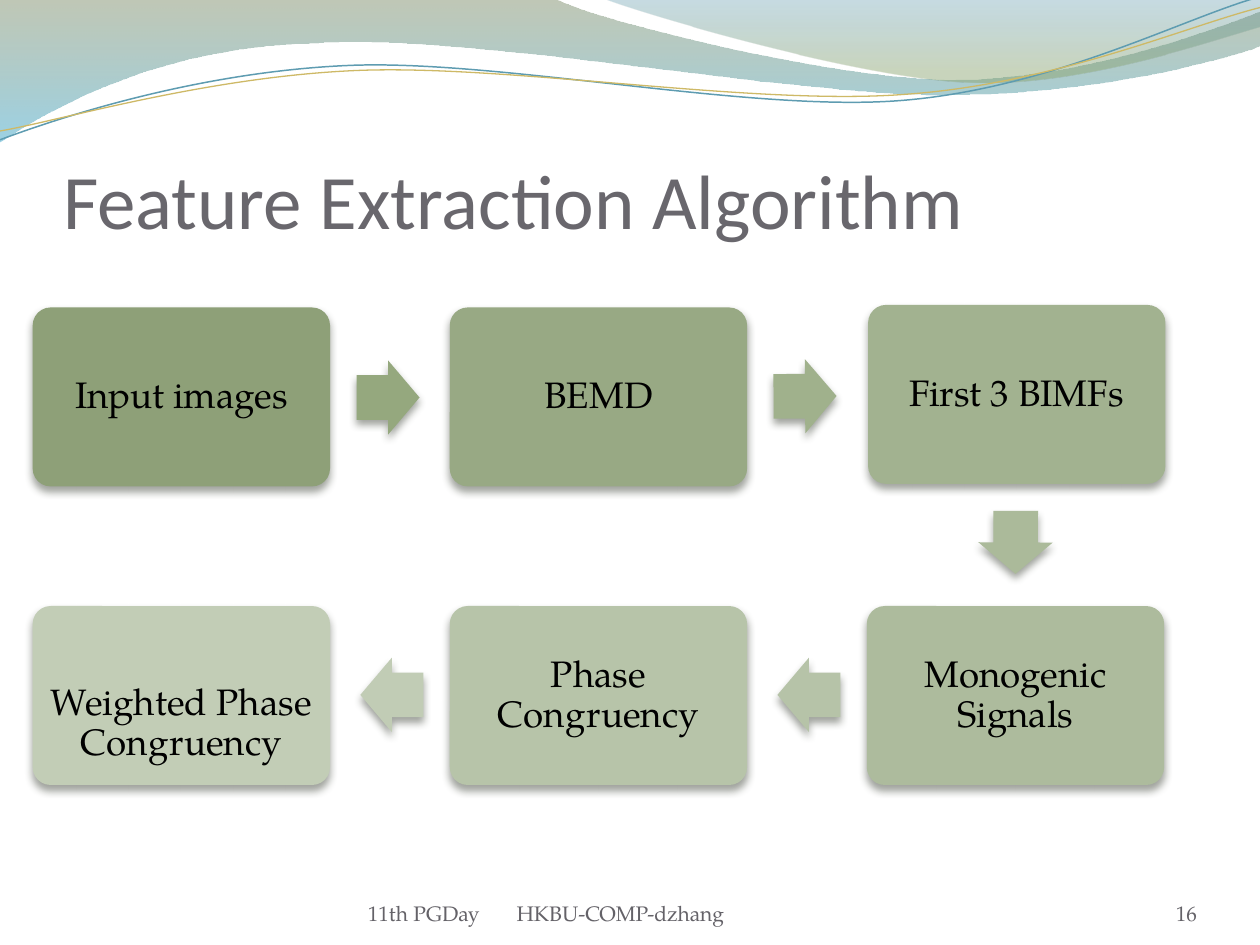
from lxml import etree
from pptx import Presentation
from pptx.dml.color import RGBColor
from pptx.enum.shapes import MSO_SHAPE
from pptx.enum.text import MSO_ANCHOR, MSO_AUTO_SIZE, PP_ALIGN
from pptx.oxml.ns import qn
from pptx.util import Inches, Pt

ROUNDED, ARROW = MSO_SHAPE.ROUNDED_RECTANGLE, MSO_SHAPE.RIGHT_ARROW
LEFT, CENTER, RIGHT = PP_ALIGN.LEFT, PP_ALIGN.CENTER, PP_ALIGN.RIGHT
MIDDLE, BOTTOM = MSO_ANCHOR.MIDDLE, MSO_ANCHOR.BOTTOM
NO_FIT = MSO_AUTO_SIZE.NONE

BODY_FONT, TITLE_FONT = "TeX Gyre Pagella", "Calibri"
BLACK = RGBColor(0x00, 0x00, 0x00)
TITLE_GREY = RGBColor(0x69, 0x67, 0x6D)
FOOTER_GREY = RGBColor(0x64, 0x62, 0x68)
SHADOW = RGBColor(0x3B, 0x41, 0x35)
OLIVE = RGBColor(0x74, 0x85, 0x5E)
SKY = RGBColor(0x4A, 0xAC, 0xCE)
TEAL = RGBColor(0x45, 0x88, 0x9F)
MOSS = RGBColor(0x8A, 0xA3, 0x6D)
LINE_BLUE = RGBColor(0x5E, 0x9C, 0xB1)
LINE_GOLD = RGBColor(0xCE, 0xB9, 0x66)

# Flow grid
COLUMNS = [0.26 + 3.31 * index for index in range(3)]
ROWS = [2.44, 4.81]
BOX_WIDTH, BOX_HEIGHT = 2.36, 1.42
ARROW_LENGTH, ARROW_WIDTH = 0.5, 0.59

# Text, left, top, fill, extra inset above the text
STEPS = [
    ("Input images", COLUMNS[0], ROWS[0], RGBColor(0x8E, 0xA0, 0x78), 0),
    ("BEMD", COLUMNS[1], ROWS[0], RGBColor(0x98, 0xA9, 0x84), 0),
    ("First 3 BIMFs", COLUMNS[2] + 0.01, ROWS[0] - 0.02, RGBColor(0xA2, 0xB2, 0x90), 0),
    ("Monogenic Signals", COLUMNS[2], ROWS[1], RGBColor(0xAD, 0xBB, 0x9D), 0),
    ("Phase Congruency", COLUMNS[1], ROWS[1], RGBColor(0xB7, 0xC4, 0xA9), 0),
    ("Weighted Phase Congruency", COLUMNS[0], ROWS[1], RGBColor(0xC2, 0xCD, 0xB6), 0.45),
]

# Left, top, rotation, fill
ARROWS = [
    (2.83, 2.86, 0, RGBColor(0x95, 0xA8, 0x7E)),
    (6.14, 2.85, -0.4, RGBColor(0xA0, 0xB1, 0x8C)),
    (7.81, 4.01, 90.2, RGBColor(0xAB, 0xBA, 0x9A)),
    (6.17, 5.22, 180, RGBColor(0xB6, 0xC3, 0xA8)),
    (2.86, 5.22, 180, RGBColor(0xC1, 0xCC, 0xB5)),
]

# Outlines: a start point, then line ends (x, y) or curves (two controls and an end)
LEFT_WAVE = [(0, 0), (4.4, -0.01), (4.76, 0.17, 6.64, 0.63, 7.58, 0.63),
             (8.53, 0.63, 9.58, 0.26, 10, 0.09), (10.01, 0.36),
             (9.83, 0.44, 8.7, 0.76, 7.46, 0.75), (6.22, 0.75, 3.82, 0.28, 2.57, 0.34),
             (1.29, 0.36, 0.46, 0.83, -0.01, 1.13)]
RIGHT_WAVE = [(4.79, -0.01), (5.09, 0.11, 6.82, 0.62, 7.69, 0.65),
              (8.56, 0.69, 9.61, 0.32, 10, 0.21), (10, 0)]
BLUE_CURVE = [(0, 1.11), (0.48, 0.93, 1.58, 0.57, 2.77, 0.52),
              (3.95, 0.47, 5.93, 0.89, 7.13, 0.8), (8.33, 0.71, 9.38, 0.15, 9.98, -0.02)]
GOLD_CURVE = [(0, 1.04), (0.47, 0.96, 1.64, 0.61, 2.83, 0.56),
              (4.03, 0.51, 5.97, 0.84, 7.17, 0.75), (8.36, 0.67, 9.41, 0.21, 10, 0.06)]


def add_alpha(color_element, percent):
    etree.SubElement(color_element, qn("a:alpha"), val=str(percent * 1000))


def add_outline(page, outline, close):
    """Draw all points as lines, then join each curve's three points into one curve."""
    points = [(Inches(segment[i]), Inches(segment[i + 1]))
              for segment in outline for i in range(0, len(segment), 2)]
    builder = page.shapes.build_freeform(*points[0])
    builder.add_line_segments(points[1:], close=close)
    shape = builder.convert_to_shape()
    shape.shadow.inherit = False
    lines = iter(list(shape.element.iter(qn("a:lnTo"))))
    for segment in outline[1:]:
        line = next(lines)
        if len(segment) == 6:
            line.tag = qn("a:cubicBezTo")
            for other in (next(lines), next(lines)):
                line.append(other[0])
                other.getparent().remove(other)
    return shape


def add_wave(page, outline, stops):
    wave = add_outline(page, outline, close=True)
    wave.line.fill.background()
    wave.fill.gradient()
    wave.fill.gradient_angle = 270
    for stop, (position, color, _) in zip(wave.fill.gradient_stops, stops):
        stop.position = position
        stop.color.rgb = color
    for element, (_, _, opacity) in zip(wave.element.iter(qn("a:gs")), stops):
        add_alpha(element[0], opacity)


def add_curve(page, outline, color, width):
    curve = add_outline(page, outline, close=False)
    curve.fill.background()
    curve.line.color.rgb = color
    curve.line.width = Pt(width)


def add_block(page, kind, left, top, width, height, fill, adjustments):
    """Filled shape without outline, with a soft shadow below."""
    block = page.shapes.add_shape(
        kind, Inches(left), Inches(top), Inches(width), Inches(height))
    for index, value in enumerate(adjustments):
        block.adjustments[index] = value
    block.fill.solid()
    block.fill.fore_color.rgb = fill
    block.line.fill.background()
    block.shadow.inherit = False
    effects = block.element.spPr.find(qn("a:effectLst"))
    shadow = etree.SubElement(
        effects, qn("a:outerShdw"), blurRad=str(Pt(4.5)), dist=str(Pt(3)),
        dir="5400000", rotWithShape="0")
    add_alpha(etree.SubElement(shadow, qn("a:srgbClr"), val=str(SHADOW)), 48)
    return block


def write(box, text, font=BODY_FONT, size=12, color=BLACK, align=LEFT,
          anchor=BOTTOM, insets=(0, 0, 0, 0), spacing=None):
    frame = box.text_frame
    frame.word_wrap = True
    frame.auto_size = NO_FIT
    frame.vertical_anchor = anchor
    (frame.margin_left, frame.margin_top,
     frame.margin_right, frame.margin_bottom) = map(Inches, insets)
    para = frame.paragraphs[0]
    para.alignment = align
    para.line_spacing = spacing
    span = para.add_run()
    span.text = text
    span.font.name = font
    span.font.size = Pt(size)
    span.font.color.rgb = color
    return para


def add_footer(page, text, left, width, align=LEFT):
    box = page.shapes.add_textbox(Inches(left), Inches(6.95), Inches(width), Inches(0.4))
    return write(box, text, color=FOOTER_GREY, align=align)


def add_tab_stop(para, position):
    tabs = etree.SubElement(para._p.get_or_add_pPr(), qn("a:tabLst"))
    etree.SubElement(tabs, qn("a:tab"), pos=str(Inches(position)), algn="l")


def main():
    deck = Presentation()
    deck.slide_width, deck.slide_height = Inches(10), Inches(7.5)
    page = deck.slides.add_slide(deck.slide_layouts[5])

    # Decoration along the top
    add_wave(page, LEFT_WAVE, [(0, OLIVE, 45), (1, SKY, 55)])
    add_wave(page, RIGHT_WAVE, [(0, TEAL, 30), (0.8, MOSS, 45)])
    add_curve(page, BLUE_CURVE, LINE_BLUE, 0.85)
    add_curve(page, GOLD_CURVE, LINE_GOLD, 0.75)

    # Title
    title = page.shapes.title
    title.left, title.top = Inches(0.5), Inches(0.75)
    title.width, title.height = Inches(9), Inches(1.19)
    write(title, "Feature Extraction Algorithm", font=TITLE_FONT, size=44,
          color=TITLE_GREY, insets=(0, 0.05, 0, 0))

    # Process steps and the arrows between them
    for text, left, top, fill, extra in STEPS:
        box = add_block(page, ROUNDED, left, top, BOX_WIDTH, BOX_HEIGHT, fill, [0.1])
        write(box, text, size=21, align=CENTER, anchor=MIDDLE,
              insets=(0.09, 0.09 + extra, 0.09, 0.09), spacing=0.9)
    for left, top, rotation, fill in ARROWS:
        arrow = add_block(page, ARROW, left, top, ARROW_LENGTH, ARROW_WIDTH, fill, [0.6, 0.5])
        arrow.rotation = rotation

    # Footer and page number
    add_tab_stop(add_footer(page, "11th PGDay\tHKBU-COMP-dzhang", 2.92, 3.67), 1.18)
    add_footer(page, "16", 8.67, 0.83, align=RIGHT)

    deck.save("out.pptx")


if __name__ == "__main__":
    main()
